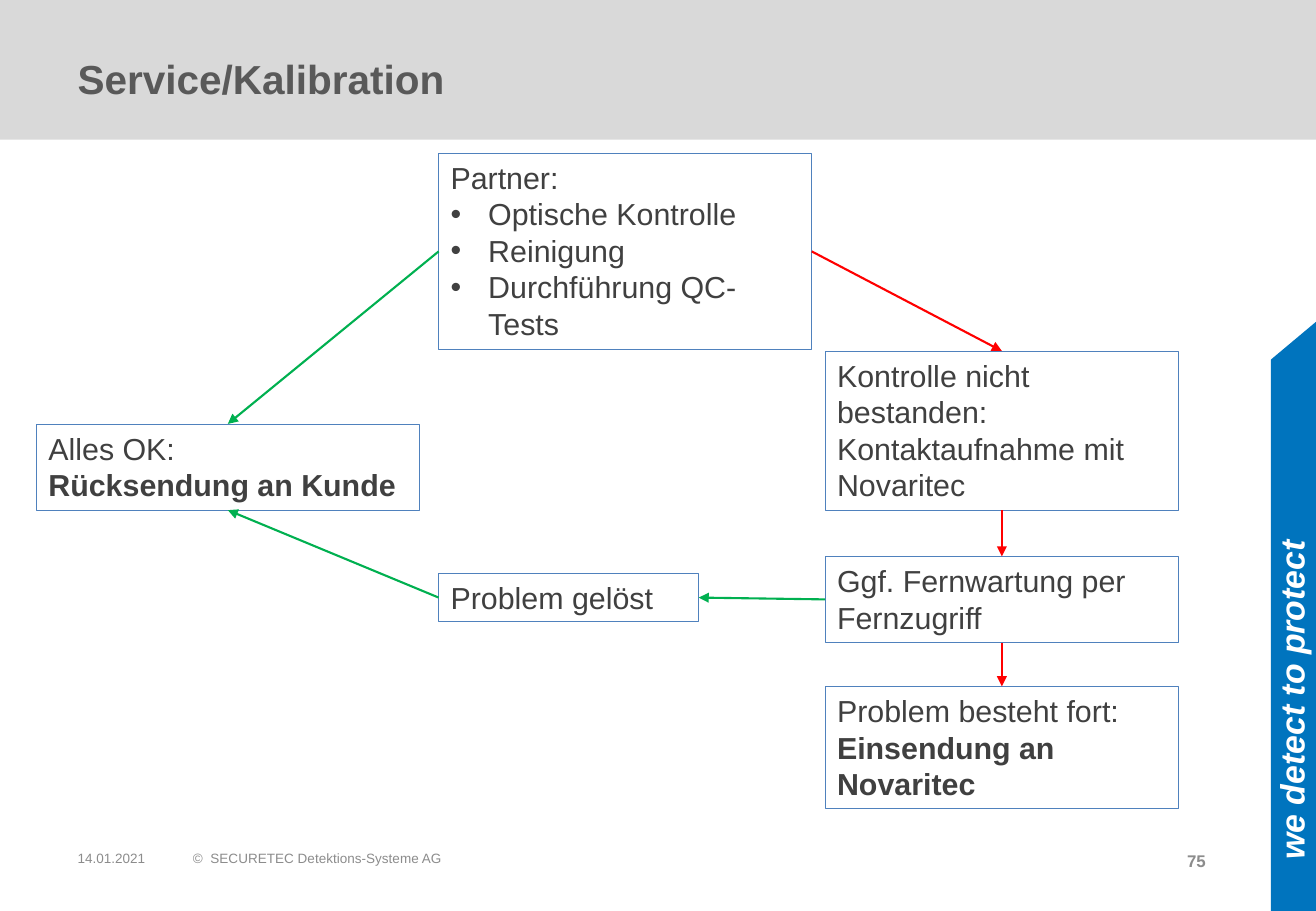
from lxml import etree
from pptx import Presentation
from pptx import util as u
from pptx.dml.color import RGBColor
from pptx.enum import shapes, text
from pptx.oxml.ns import qn

COLORS = {
    "header": "D9D9D9", "title": "595959", "body": "404040", "footer": "8C8C8C",
    "banner": "0074BE", "white": "FFFFFF", "border": "4F81BD",
    "failed": "FF0000", "passed": "00B050",
}
FONT = "Arial"
TOP, LEFT, BOTTOM, RIGHT = range(4)

STEPS = {
    "partner": ((3.61, 1.26, 3.07, 1.62), [
        [("Partner:", False)], "Optische Kontrolle", "Reinigung", "Durchführung QC-Tests"]),
    "all_ok": ((0.3, 3.49, 3.15, 0.71), [
        [("Alles OK:", False)], [("Rücksendung an Kunde", True)]]),
    "failed": ((6.79, 2.89, 2.91, 1.31), [
        [("Kontrolle nicht bestanden: Kontaktaufnahme mit Novaritec", False)]]),
    "remote": ((6.79, 4.58, 2.91, 0.71), [
        [("Ggf. Fernwartung per Fernzugriff", False)]]),
    "persists": ((6.79, 5.65, 2.91, 1.01), [
        [("Problem besteht fort: ", False), ("Einsendung an Novaritec", True)]]),
    "solved": ((3.61, 4.72, 2.14, 0.4), [[("Problem gelöst", False)]]),
}
ARROWS = [
    ("partner", RIGHT, "failed", TOP, "failed"),
    ("failed", BOTTOM, "remote", TOP, "failed"),
    ("remote", BOTTOM, "persists", TOP, "failed"),
    ("remote", LEFT, "solved", RIGHT, "passed"),
    ("solved", LEFT, "all_ok", BOTTOM, "passed"),
    ("partner", LEFT, "all_ok", TOP, "passed"),
]


def color(name):
    """Return the named colour."""
    return RGBColor.from_string(COLORS[name])


def style(font, size, name, bold=None, italic=None):
    """Set the face, size, colour and weight of a font."""
    font.name, font.size, font.bold, font.italic = FONT, u.Pt(size), bold, italic
    font.color.rgb = color(name)


def add_box(slide, box):
    """Add an empty wrapping text box."""
    shape = slide.shapes.add_textbox(*map(u.Inches, box))
    shape.text_frame.word_wrap = True
    return shape


def add_label(slide, box, words, *font_style):
    """Add a text box with one styled line."""
    shape = add_box(slide, box)
    paragraph = shape.text_frame.paragraphs[0]
    paragraph.text = words
    style(paragraph.font, *font_style)
    return shape


def fill_plain(shape, name):
    """Give a shape a plain fill without line or shadow."""
    shape.shadow.inherit = False
    shape.fill.solid()
    shape.fill.fore_color.rgb = color(name)
    shape.line.fill.background()


def add_header(slide, box):
    """Draw the title band."""
    left, top, width, height = box
    band = slide.shapes.add_shape(shapes.MSO_SHAPE.RECTANGLE, *map(u.Inches, box))
    fill_plain(band, "header")
    title = add_label(slide, (left + 0.54, top + 0.3, width - 2.8, 0.69),
                      "Service/Kalibration", 24, "title", True)
    title.text_frame.vertical_anchor = text.MSO_ANCHOR.MIDDLE


def add_banner(slide, box):
    """Draw the slanted side banner with its upright slogan."""
    left, top, width, height = box
    right, bottom = left + width, top + height
    corners = [(left, top + 0.31), (right, top), (right, bottom), (left, bottom)]
    points = [(u.Inches(x), u.Inches(y)) for x, y in corners]
    builder = slide.shapes.build_freeform(*points[0])
    builder.add_line_segments(points[1:])
    fill_plain(builder.convert_to_shape(), "banner")
    length, thickness = 3.35, 0.43
    slogan = add_label(
        slide, (left + 0.165 - length / 2, bottom - 2 - thickness / 2, length, thickness),
        "we detect to protect", 20, "white", True, True)
    slogan.rotation = 270


def add_footer(slide, box):
    """Write date, copyright line and page number."""
    left, top, width, height = box
    add_label(slide, (left, top, 0.87, height), "14.01.2021", 8, "footer")
    add_label(slide, (left + 0.95, top, 8.1, height),
              "©  SECURETEC Detektions-Systeme AG", 8, "footer")
    add_label(slide, (left + width - 0.62, top, 0.62, height), "75", 10, "footer", True)


def add_bullet(paragraph):
    """Give a paragraph a round bullet with a hanging indent."""
    properties = paragraph._p.get_or_add_pPr()
    properties.set("marL", str(u.Inches(0.31)))
    properties.set("indent", str(u.Inches(-0.31)))
    etree.SubElement(properties, qn("a:buFont")).set("typeface", FONT)
    etree.SubElement(properties, qn("a:buChar")).set("char", "•")


def add_step(slide, box, lines):
    """Draw one bordered step; plain strings become bullets."""
    shape = add_box(slide, box)
    shape.line.color.rgb = color("border")
    shape.line.width = u.Pt(0.5)
    frame = shape.text_frame
    for index, line in enumerate(lines):
        paragraph = frame.add_paragraph() if index else frame.paragraphs[0]
        if isinstance(line, str):
            add_bullet(paragraph)
            line = [(line, False)]
        style(paragraph.font, 18, "body")
        for words, bold in line:
            run = paragraph.add_run()
            run.text = words
            if bold:
                run.font.bold = True
    return shape


def add_arrow(slide, start, start_side, end, end_side, name):
    """Connect two steps with an arrow."""
    arrow = slide.shapes.add_connector(shapes.MSO_CONNECTOR.STRAIGHT, 0, 0, 0, 0)
    arrow.begin_connect(start, start_side)
    arrow.end_connect(end, end_side)
    arrow.line.color.rgb = color(name)
    arrow.line.width = u.Pt(1.25)
    etree.SubElement(arrow.line._get_or_add_ln(), qn("a:tailEnd")).set("type", "triangle")
    etree.SubElement(arrow._element.spPr, qn("a:effectLst"))


def add_flow(slide, left, top):
    """Draw the steps and the arrows between them."""
    steps = {}
    for name, ((x, y, width, height), lines) in STEPS.items():
        steps[name] = add_step(slide, (left + x, top + y, width, height), lines)
    for start, start_side, end, end_side, name in ARROWS:
        add_arrow(slide, steps[start], start_side, steps[end], end_side, name)


def main():
    """Build and save the slide."""
    presentation = Presentation()
    presentation.slide_width = u.Inches(10.83)
    presentation.slide_height = u.Inches(7.5)
    slide = presentation.slides.add_slide(presentation.slide_layouts[6])
    add_header(slide, (0, 0, 10.83, 1.15))
    add_banner(slide, (10.46, 2.65, 0.37, 4.85))
    add_footer(slide, (0.54, 6.95, 9.75, 0.4))
    add_flow(slide, 0, 0)
    presentation.save("out.pptx")


if __name__ == "__main__":
    main()
